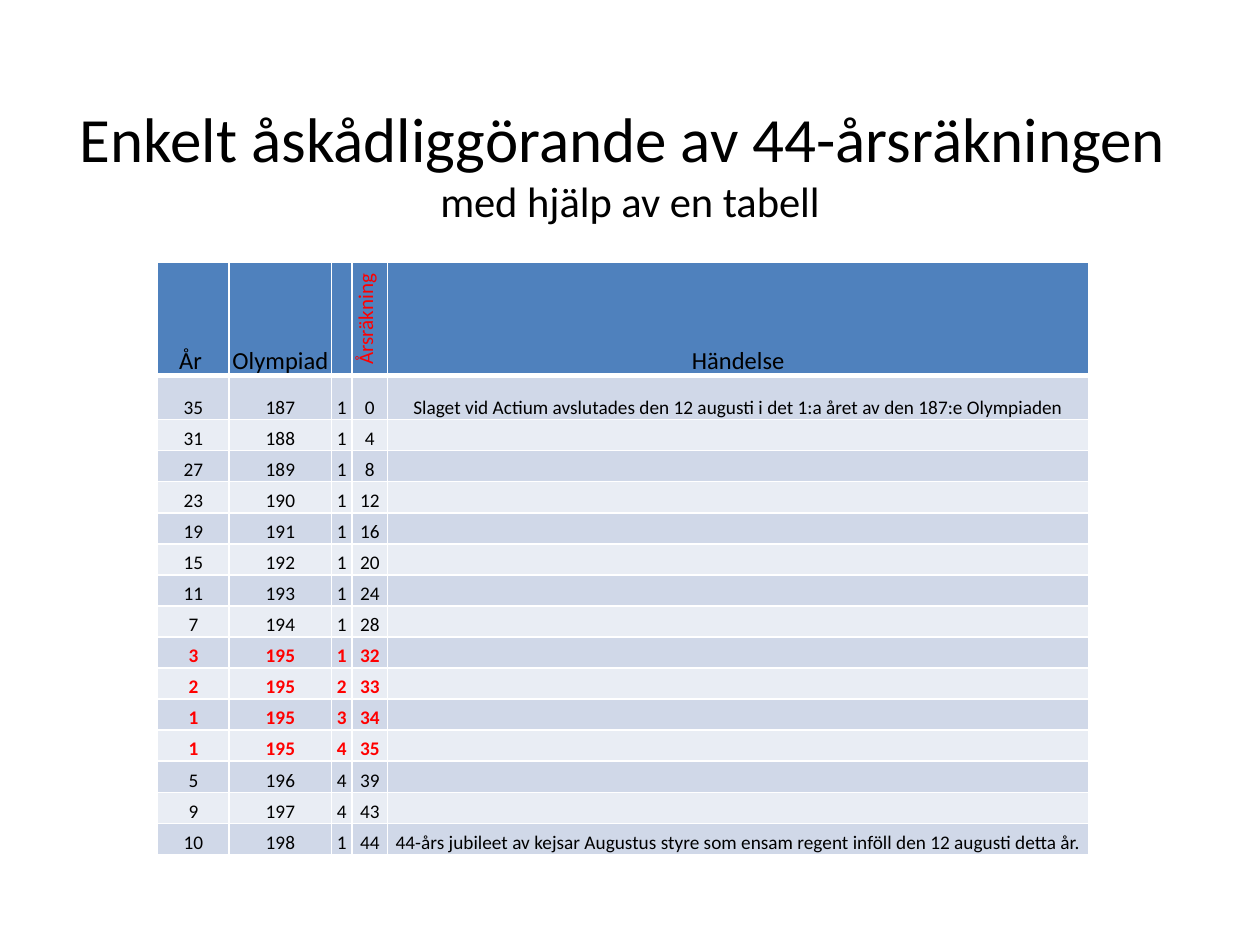
import pptx
import pptx.util
import pptx.dml.color
import pptx.enum.text
import pptx.oxml.ns
from lxml import etree

FONT = "Calibri"
BLACK, RED, WHITE = "000000", "FF0000", "FFFFFF"
HEADER_FILL, BAND_FILLS = "4F81BD", ("D0D8E8", "E9EDF4")

TITLE = ("Enkelt åskådliggörande av 44-årsräkningen ", 36)
SUBTITLE = ("med hjälp av en tabell", 24.3)
HEADINGS = ("År ", "Olympiad", "", "Årsräkning", "Händelse")
VERTICAL_HEADING = "Årsräkning"
ACTIUM = "Slaget vid Actium avslutades den 12 augusti i det 1:a året av den 187:e Olympiaden"
JUBILEE = "44-års jubileet av kejsar Augustus styre som ensam regent inföll den 12 augusti detta år."
YEARS = [
    (35, 187, 1, 0, ACTIUM),
    (31, 188, 1, 4, ""),
    (27, 189, 1, 8, ""),
    (23, 190, 1, 12, ""),
    (19, 191, 1, 16, ""),
    (15, 192, 1, 20, ""),
    (11, 193, 1, 24, ""),
    (7, 194, 1, 28, ""),
    (3, 195, 1, 32, ""),
    (2, 195, 2, 33, ""),
    (1, 195, 3, 34, ""),
    (1, 195, 4, 35, ""),
    (5, 196, 4, 39, ""),
    (9, 197, 4, 43, ""),
    (10, 198, 1, 44, JUBILEE),
]
TURN_OF_ERA_OLYMPIAD = 195

COLUMN_WIDTHS = (41, 58.5, 11.7, 20.4, 400.6)
ROW_HEIGHTS = [64.6, 25.2] + [17.75] * (len(YEARS) - 1)
TABLE_LEFT, TABLE_TOP = 90, 150

Pt = pptx.util.Pt
qn = pptx.oxml.ns.qn


def rgb(color):
    return pptx.dml.color.RGBColor.from_string(color)


def add_run(paragraph, text, size, color=BLACK, bold=False):
    run = paragraph.add_run()
    run.text = text
    run.font.name = FONT
    run.font.size = Pt(size)
    run.font.bold = bold
    run.font.color.rgb = rgb(color)


def set_borders(cell, top, bottom):
    properties = cell._tc.get_or_add_tcPr()
    for side, width in (("lnL", 1), ("lnR", 1), ("lnT", top), ("lnB", bottom)):
        border = etree.SubElement(properties, qn("a:" + side), w=str(Pt(width)))
        fill = etree.SubElement(border, qn("a:solidFill"))
        etree.SubElement(fill, qn("a:srgbClr"), val=WHITE)


def fill_cell(cell, text, fill, size, color, bold, top, bottom):
    set_borders(cell, top, bottom)
    cell.fill.solid()
    cell.fill.fore_color.rgb = rgb(fill)
    cell.margin_left = cell.margin_right = cell.margin_top = Pt(0.72)
    cell.margin_bottom = 0
    cell.vertical_anchor = pptx.enum.text.MSO_ANCHOR.BOTTOM
    paragraph = cell.text_frame.paragraphs[0]
    paragraph.alignment = pptx.enum.text.PP_ALIGN.CENTER
    if text:
        add_run(paragraph, text, size, color, bold)
    else:
        etree.SubElement(paragraph._p, qn("a:endParaRPr"), sz=str(size * 100))


def add_title(slide):
    heading = slide.shapes.add_textbox(Pt(36), Pt(48.2), Pt(648), Pt(90))
    frame = heading.text_frame
    frame.word_wrap = True
    frame.vertical_anchor = pptx.enum.text.MSO_ANCHOR.MIDDLE
    paragraph = frame.paragraphs[0]
    paragraph.alignment = pptx.enum.text.PP_ALIGN.CENTER
    add_run(paragraph, *TITLE)
    paragraph.add_line_break()
    add_run(paragraph, *SUBTITLE)


def add_year_table(slide):
    table = slide.shapes.add_table(
        len(ROW_HEIGHTS), len(COLUMN_WIDTHS), Pt(TABLE_LEFT), Pt(TABLE_TOP),
        Pt(sum(COLUMN_WIDTHS)), Pt(sum(ROW_HEIGHTS))).table
    table.first_row = table.horz_banding = False
    for column, width in zip(table.columns, COLUMN_WIDTHS):
        column.width = Pt(width)
    for row, height in zip(table.rows, ROW_HEIGHTS):
        row.height = Pt(height)

    for c, text in enumerate(HEADINGS):
        cell = table.cell(0, c)
        vertical = text == VERTICAL_HEADING
        size, color = (12, RED) if vertical else (14, BLACK)
        fill_cell(cell, text, HEADER_FILL, size, color, False, 1, 3)
        if vertical:
            cell._tc.get_or_add_tcPr().set("vert", "vert270")

    for r, year in enumerate(YEARS, 1):
        turn = year[1] == TURN_OF_ERA_OLYMPIAD
        for c, value in enumerate(year):
            fill_cell(table.cell(r, c), str(value), BAND_FILLS[(r - 1) % 2], 11,
                      RED if turn else BLACK, turn, 3 if r == 1 else 1, 1)


def main():
    deck = pptx.Presentation()
    deck.slide_width, deck.slide_height = Pt(720), Pt(540)
    slide = deck.slides.add_slide(deck.slide_layouts[6])
    add_title(slide)
    add_year_table(slide)
    deck.save("out.pptx")


if __name__ == "__main__":
    main()
